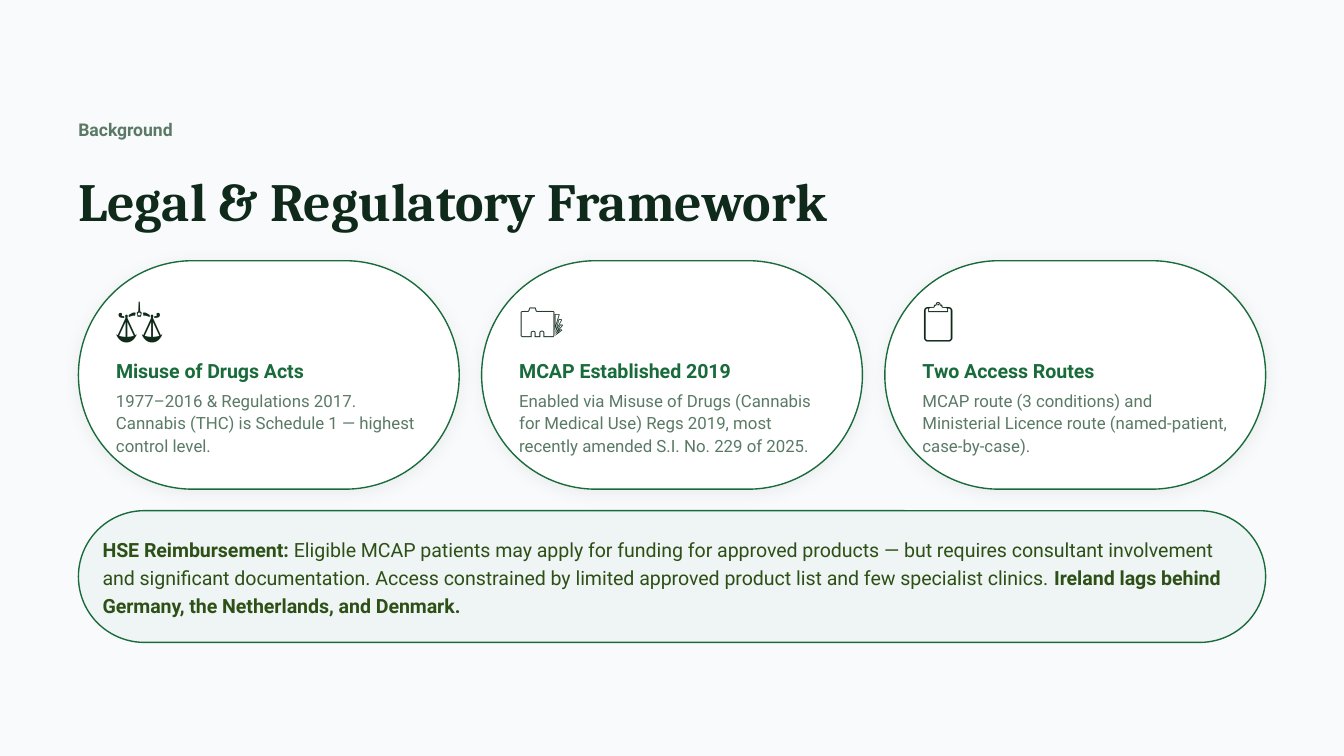
from lxml.etree import SubElement
from pptx import Presentation
from pptx.dml.color import RGBColor
from pptx.enum.shapes import MSO_SHAPE
from pptx.enum.text import MSO_ANCHOR, PP_ALIGN
from pptx.oxml.ns import qn
from pptx.util import Inches, Pt

PAPER = RGBColor(0xF8, 0xFA, 0xFC)
WHITE = RGBColor(0xFF, 0xFF, 0xFF)
GREEN = RGBColor(0x1A, 0x6B, 0x3C)
INK = RGBColor(0x0F, 0x2A, 0x1A)
MUTED = RGBColor(0x5A, 0x7A, 0x65)
OLIVE = RGBColor(0x2D, 0x50, 0x16)

PAGE_WIDTH = 10
PAGE_HEIGHT = PAGE_WIDTH * 9 / 16
MARGIN = 7 / 12
CONTENT_WIDTH = PAGE_WIDTH - 2 * MARGIN
CARD_GAP = 1 / 6

CARDS = [
    ("⚖️", "Misuse of Drugs Acts",
     "1977–2016 & Regulations 2017. Cannabis (THC) is Schedule 1 — highest "
     "control level."),
    ("🗂️", "MCAP Established 2019",
     "Enabled via Misuse of Drugs (Cannabis for Medical Use) Regs 2019, most "
     "recently amended S.I. No. 229 of 2025."),
    ("📋", "Two Access Routes",
     "MCAP route (3 conditions) and Ministerial Licence route (named-patient, "
     "case-by-case)."),
]
REIMBURSEMENT = [
    ("HSE Reimbursement:", True),
    (" Eligible MCAP patients may apply for funding for approved products — but "
     "requires consultant involvement and significant documentation. Access "
     "constrained by limited approved product list and few specialist clinics. ",
     False),
    ("Ireland lags behind Germany, the Netherlands, and Denmark.", True),
]


def add_text(page, text, left, top, width, height, *, size, color, spacing,
             font="Roboto", bold=False):
    box = page.shapes.add_textbox(Inches(left), Inches(top), Inches(width), Inches(height))
    frame = box.text_frame
    frame.word_wrap = True
    frame.vertical_anchor = MSO_ANCHOR.TOP
    frame.margin_left = frame.margin_right = frame.margin_top = frame.margin_bottom = 0
    para = frame.paragraphs[0]
    para.alignment = PP_ALIGN.LEFT
    para.line_spacing = Pt(spacing)
    parts = [(text, bold)] if isinstance(text, str) else text
    for words, strong in parts:
        span = para.add_run()
        span.text = words
        span.font.name = font
        span.font.size = Pt(size)
        span.font.bold = strong
        span.font.color.rgb = color


def add_pill(page, left, top, width, height, fill):
    pill = page.shapes.add_shape(MSO_SHAPE.ROUNDED_RECTANGLE, Inches(left), Inches(top),
                                 Inches(width), Inches(height))
    pill.adjustments[0] = 0.5
    pill.shadow.inherit = False
    pill.fill.solid()
    pill.fill.fore_color.rgb = fill
    pill.line.color.rgb = GREEN
    pill.line.width = Pt(0.75)
    return pill


def set_alpha(color, percent):
    SubElement(color, qn("a:alpha"), val=str(percent * 1000))


def add_soft_shadow(shape):
    effects = shape._element.spPr.find(qn("a:effectLst"))
    shadow = SubElement(effects, qn("a:outerShdw"), blurRad=str(Pt(9)),
                        dist=str(Pt(1.5)), dir="5400000", algn="ctr", rotWithShape="0")
    set_alpha(SubElement(shadow, qn("a:srgbClr"), val="000000"), 6)


def add_heading(page, left, top, width):
    add_text(page, "Background", left, top, width, 0.19,
             size=9.4, color=MUTED, spacing=14, bold=True)
    add_text(page, "Legal & Regulatory Framework", left, top + 0.28, width, 0.6,
             size=28.8, color=INK, spacing=43.2, font="Cambria", bold=True)


def add_card(page, left, top, width, height, icon, title, body):
    add_soft_shadow(add_pill(page, left, top, width, height, WHITE))
    inner = left + 0.28
    add_text(page, icon, inner, top + 0.24, width - 0.51, 0.38,
             size=22.5, color=INK, spacing=27)
    add_text(page, title, inner, top + 0.7, width - 0.51, 0.21,
             size=10.5, color=GREEN, spacing=15, bold=True)
    add_text(page, body, inner, top + 0.95, width - 0.55, 0.5,
             size=9, color=MUTED, spacing=12)


def add_callout(page, left, top, width, height):
    pill = add_pill(page, left, top, width, height, GREEN)
    set_alpha(pill._element.spPr.find(qn("a:solidFill"))[0], 4)
    add_text(page, REIMBURSEMENT, left + 0.18, top + 0.17, width - 0.35, 0.62,
             size=10.5, color=OLIVE, spacing=15)


def main():
    deck = Presentation()
    deck.slide_width = Inches(PAGE_WIDTH)
    deck.slide_height = Inches(PAGE_HEIGHT)
    page = deck.slides.add_slide(deck.slide_layouts[6])
    page.background.fill.solid()
    page.background.fill.fore_color.rgb = PAPER
    add_heading(page, MARGIN, 0.85, CONTENT_WIDTH + 0.18)
    card_width = (CONTENT_WIDTH - CARD_GAP * (len(CARDS) - 1)) / len(CARDS)
    for index, card in enumerate(CARDS):
        left = MARGIN + index * (card_width + CARD_GAP)
        add_card(page, left, 1.94, card_width, 1.7, *card)
    add_callout(page, MARGIN, 3.8, CONTENT_WIDTH, 0.98)
    deck.save("out.pptx")


if __name__ == "__main__":
    main()
